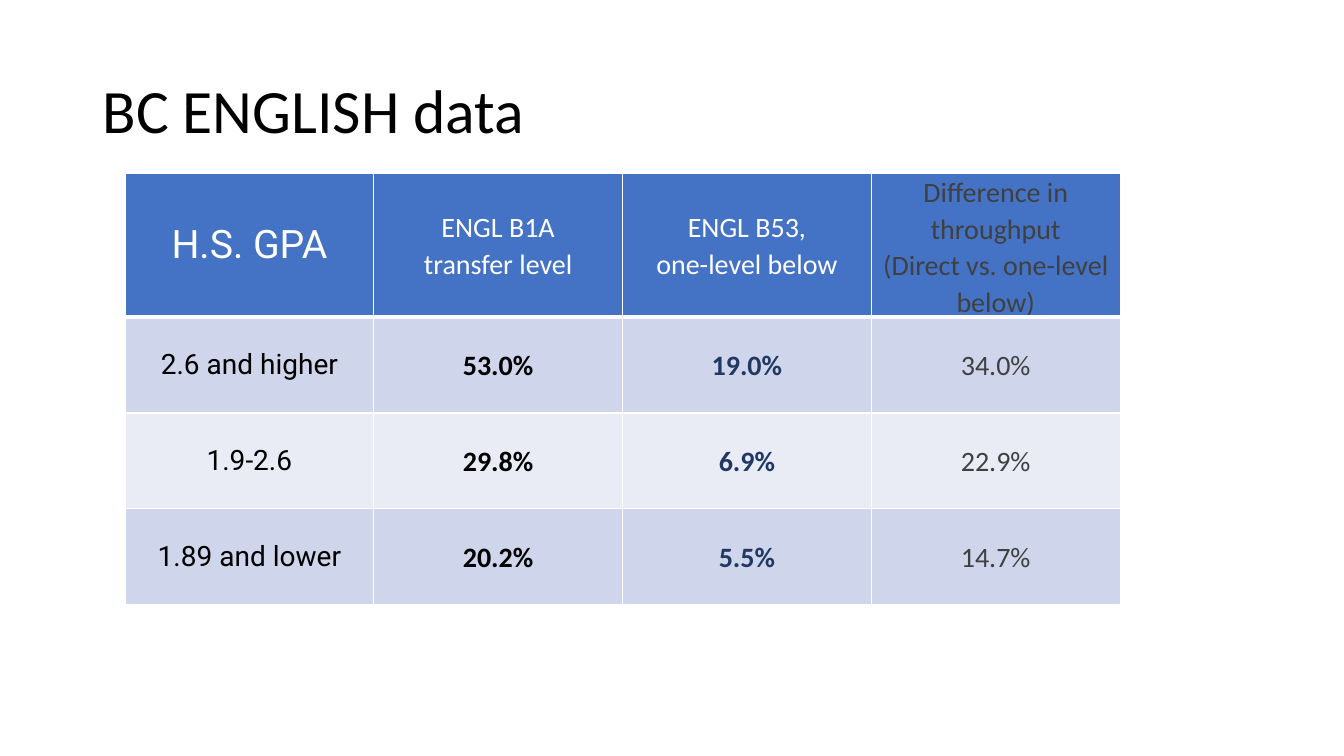
from lxml import etree
from pptx import Presentation
from pptx.dml.color import RGBColor
from pptx.enum import text
from pptx.oxml.ns import qn
from pptx.util import Inches, Pt

TITLE = "BC ENGLISH data"
ROWS = [
    ["H.S. GPA", "ENGL B1A\ntransfer level", "ENGL B53,\none-level below",
     "Difference in throughput\n(Direct vs. one-level below)"],
    ["2.6 and higher", "53.0%", "19.0%", "34.0%"],
    ["1.9-2.6", "29.8%", "6.9%", "22.9%"],
    ["1.89 and lower", "20.2%", "5.5%", "14.7%"],
]
THEME = {
    "black": "000000", "white": "FFFFFF", "navy": "203864", "gray": "404040",
    "header": "4472C4", "bands": ["CFD5EA", "E9EBF5"],
    "body_font": "Calibri", "label_font": "Roboto",
    "title_size": 44, "label_header_size": 28, "cell_size": 20,
}
TITLE_BOX = (0.92, 0.4, 11.5, 1.45)
TABLE_BOX = (1.24, 1.72, 9.87, 4.27)
ROW_HEIGHT = 0.95
VALUE_INSETS = {"margin_left": Inches(0.07), "margin_right": Inches(0.07),
                "margin_top": 0, "margin_bottom": 0}
VALUE_COLORS = ["black", "navy", "gray"]


def set_all(obj, values):
    for name, value in values.items():
        setattr(obj, name, value)


def write(tf, content, color, size, font, bold=False, **paragraph):
    """Fill a text frame, one paragraph for each line of content."""
    for i, line in enumerate(content.split("\n")):
        p = tf.add_paragraph() if i else tf.paragraphs[0]
        set_all(p, paragraph)
        r = p.add_run()
        r.text = line
        set_all(r.font, {"name": font, "size": Pt(size), "bold": bold})
        r.font.color.rgb = RGBColor.from_string(THEME[color])


def add_borders(cell, bottom):
    """Draw white cell edges; call before the fill, which must follow them."""
    tcPr = cell._tc.get_or_add_tcPr()
    for side, width in zip("LRTB", (1, 1, 1, bottom)):
        ln = etree.SubElement(tcPr, qn(f"a:ln{side}"), w=str(Pt(width)))
        fill = etree.SubElement(ln, qn("a:solidFill"))
        etree.SubElement(fill, qn("a:srgbClr"), val=THEME["white"])


def format_cell(cell, content, row, col):
    is_header, is_label = row == 0, col == 0
    cell.vertical_anchor = text.MSO_ANCHOR.MIDDLE
    add_borders(cell, 3 if is_header else 1)
    cell.fill.solid()
    fill = THEME["header"] if is_header else THEME["bands"][(row - 1) % 2]
    cell.fill.fore_color.rgb = RGBColor.from_string(fill)

    paragraph = {"alignment": text.PP_ALIGN.CENTER}
    if is_label:
        color, font = "black", THEME["label_font"]
    else:
        color, font = VALUE_COLORS[col - 1], THEME["body_font"]
        paragraph["line_spacing"] = 1.07
        set_all(cell, VALUE_INSETS)
    if is_header and color != "gray":
        color = "white"
    size = THEME["label_header_size" if is_header and is_label else "cell_size"]
    bold = not is_header and col in (1, 2)
    write(cell.text_frame, content, color, size, font, bold, **paragraph)


def main():
    prs = Presentation()
    prs.slide_width, prs.slide_height = Inches(13.33), Inches(7.5)
    s = prs.slides.add_slide(prs.slide_layouts[6])

    tf = s.shapes.add_textbox(*map(Inches, TITLE_BOX)).text_frame
    set_all(tf, {"word_wrap": True, "vertical_anchor": text.MSO_ANCHOR.MIDDLE})
    write(tf, TITLE, "black", THEME["title_size"], THEME["body_font"],
          line_spacing=0.9)

    frame = s.shapes.add_table(len(ROWS), len(ROWS[0]), *map(Inches, TABLE_BOX))
    table = frame.table
    for r, values in enumerate(ROWS):
        table.rows[r].height = Inches(ROW_HEIGHT)
        for c, content in enumerate(values):
            format_cell(table.cell(r, c), content, r, c)
    frame.height = Inches(TABLE_BOX[3])
    prs.save("out.pptx")


if __name__ == "__main__":
    main()
